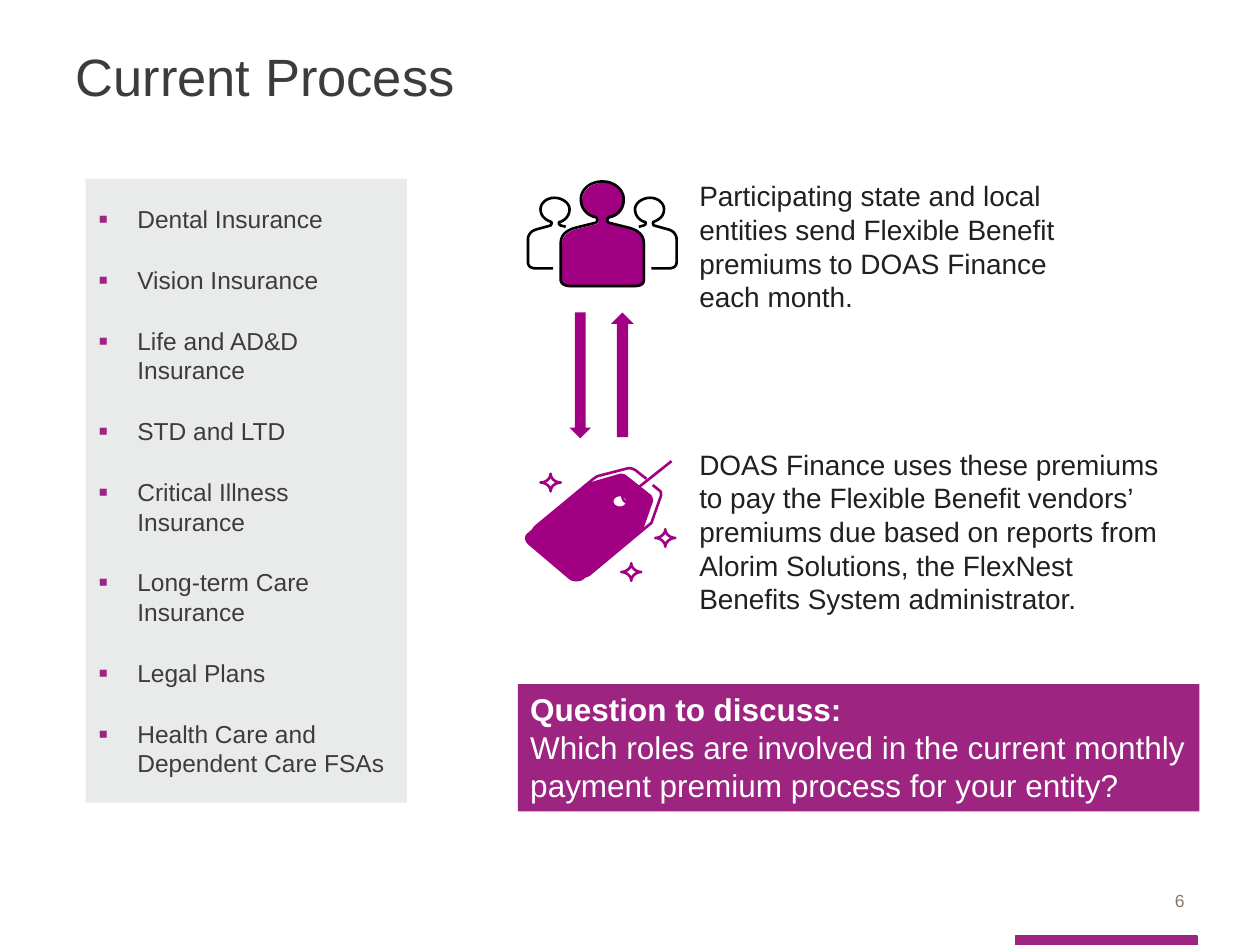
from math import cos, pi, sin

from lxml.etree import SubElement
from pptx import Presentation
from pptx.dml.color import RGBColor
from pptx.enum.shapes import MSO_SHAPE as Preset
from pptx.enum.text import MSO_ANCHOR as Anchor, MSO_AUTO_SIZE as AutoSize, PP_ALIGN as Align
from pptx.oxml.ns import qn
from pptx.util import Inches, Pt

PLANS = ["Dental Insurance", "Vision Insurance", "Life and AD&D Insurance", "STD and LTD",
         "Critical Illness Insurance", "Long-term Care Insurance", "Legal Plans",
         "Health Care and Dependent Care FSAs"]
SEND_TEXT = ("Participating state and local entities send Flexible Benefit "
             "premiums to DOAS Finance\veach month.")
PAY_TEXT = ("DOAS Finance uses these premiums to pay the Flexible Benefit vendors’ "
            "premiums due based on reports from\vAlorim Solutions, the FlexNest "
            "Benefits System administrator.")
PEOPLE_AXIS = 4.78

HALF_LEADER = [(4.78, 1.44), (4.87, 1.44, 4.95, 1.5, 4.95, 1.58), (4.95, 1.65, 4.91, 1.7, 4.85, 1.72),
               (4.83, 1.72, 4.82, 1.73, 4.82, 1.75), (4.82, 1.76, 4.83, 1.77, 4.84, 1.77), (5, 1.81),
               (5.07, 1.83, 5.11, 1.87, 5.11, 1.93), (5.11, 2.22), (5.11, 2.25, 5.08, 2.27, 5.04, 2.27),
               (4.78, 2.27)]
MEMBER = [(5.07, 1.8), (5.11, 1.79), (5.13, 1.78, 5.13, 1.76, 5.11, 1.76),
          (5.06, 1.74, 5.04, 1.7, 5.04, 1.66), (5.04, 1.61, 5.1, 1.57, 5.16, 1.57),
          (5.22, 1.57, 5.27, 1.61, 5.27, 1.66), (5.27, 1.71, 5.24, 1.74, 5.19, 1.76),
          (5.18, 1.76, 5.18, 1.78, 5.19, 1.79), (5.3, 1.82), (5.34, 1.83, 5.37, 1.86, 5.37, 1.9),
          (5.37, 2.08), (5.37, 2.11, 5.35, 2.13, 5.31, 2.13), (5.17, 2.13)]
TAG = [(5.17, 3.93), (4.98, 3.78), (4.96, 3.76, 4.94, 3.76, 4.92, 3.76), (4.68, 3.83), (4.65, 3.84),
       (4.19, 4.23), (4.16, 4.25, 4.16, 4.29, 4.19, 4.32), (4.52, 4.6), (4.55, 4.62, 4.6, 4.62, 4.63, 4.6),
       (5.09, 4.21), (5.11, 4.19), (5.18, 3.99), (5.19, 3.97, 5.18, 3.95, 5.17, 3.93)]
BACK_TAG = [(5.18, 3.85), (5.23, 3.89), (5.25, 3.9, 5.25, 3.93, 5.24, 3.95), (5.17, 4.15), (4.69, 4.55),
            (4.66, 4.58, 4.62, 4.58, 4.59, 4.55), (4.25, 4.27), (4.22, 4.25, 4.22, 4.21, 4.25, 4.18),
            (4.71, 3.8), (4.74, 3.78), (4.97, 3.72), (5, 3.71, 5.02, 3.72, 5.04, 3.73), (5.13, 3.8)]
STRING = [(5.33, 3.66), (5.04, 3.89), (5.03, 3.9, 5.01, 3.9, 4.98, 3.9),
          (4.94, 3.9, 4.93, 3.94, 4.95, 3.97), (4.97, 4, 5.03, 3.99, 5.04, 3.94)]
SPARKLE_CENTERS = [(5.28, 4.27), (4.37, 3.83), (5.01, 4.54)]


def color(value):
    return RGBColor.from_string(value)


def trace(nodes, steps=8):
    points = [nodes[0]]
    for node in nodes[1:]:
        if len(node) == 2:
            points.append(node)
            continue
        corners = [points[-1], node[:2], node[2:4], node[4:]]
        for step in range(1, steps + 1):
            t = step / steps
            weights = [(1 - t) ** 3, 3 * t * (1 - t) ** 2, 3 * t * t * (1 - t), t ** 3]
            points.append(tuple(sum(w * corner[axis] for w, corner in zip(weights, corners))
                                for axis in (0, 1)))
    return points


def mirror(points):
    return [(2 * PEOPLE_AXIS - x, y) for x, y in points]


def sparkle(center_x, center_y):
    quarter = trace([(0, -0.07), (0, -0.03, 0.04, 0, 0.08, 0)])
    upper = quarter + [(x, -y) for x, y in reversed(quarter)]
    star = upper + [(-x, y) for x, y in reversed(upper)]
    return [(center_x + x, center_y + y) for x, y in star]


class SlideBuilder:
    font = "Arial"
    dark = "3C3C3C"
    body = "202020"
    panel = "E9EAEA"
    purple = "9E2482"
    icon = "A10082"

    def __init__(self, deck):
        self.page = deck.slides.add_slide(deck.slide_layouts[1])
        self.shapes = self.page.shapes

    def place(self, shape, left, top, width, height):
        shape.left, shape.top = Inches(left), Inches(top)
        shape.width, shape.height = Inches(width), Inches(height)

    def style(self, para, size, shade, bold=False, align=Align.LEFT):
        para.alignment = align
        for span in para.runs:
            span.font.name, span.font.size = self.font, Pt(size)
            span.font.bold, span.font.color.rgb = bold, color(shade)

    def paint(self, shape, fill=None, line=None, width=0.75):
        shape.shadow.inherit = False
        if fill:
            shape.fill.solid()
            shape.fill.fore_color.rgb = color(fill)
        else:
            shape.fill.background()
        if line:
            shape.line.color.rgb = color(line)
            shape.line.width = Pt(width)
        else:
            shape.line.fill.background()

    def title(self, text, *area):
        box = self.shapes.title
        self.place(box, *area)
        box.text_frame.text = text
        box.text_frame.vertical_anchor = Anchor.TOP
        box.text_frame.auto_size = AutoSize.NONE
        self.style(box.text_frame.paragraphs[0], 30, self.dark)

    def bullets(self, items, *area):
        box = self.page.placeholders[1]
        self.place(box, *area)
        box.fill.solid()
        box.fill.fore_color.rgb = color(self.panel)
        frame = box.text_frame
        frame.text = "\n".join(items)
        frame.vertical_anchor = Anchor.MIDDLE
        frame.auto_size = AutoSize.NONE
        for index, para in enumerate(frame.paragraphs):
            props = para._p.get_or_add_pPr()
            props.set("marL", str(Inches(0.31)))
            props.set("indent", str(Inches(-0.31)))
            shade = SubElement(props, qn("a:buClr"))
            SubElement(shade, qn("a:srgbClr"), val=self.purple)
            SubElement(props, qn("a:buSzPct"), val="115000")
            SubElement(props, qn("a:buFont"), typeface=self.font)
            SubElement(props, qn("a:buChar"), char="▪")
            para.space_before, para.space_after = Pt(6 if index else 0), Pt(12)
            self.style(para, 14, self.dark)

    def text(self, text, *area, size=16, shade=body, margin=0, anchor=Anchor.TOP, align=Align.LEFT):
        box = self.shapes.add_textbox(*map(Inches, area))
        frame = box.text_frame
        frame.word_wrap = True
        frame.margin_left = frame.margin_right = Inches(margin)
        frame.margin_top = frame.margin_bottom = Inches(margin / 2)
        frame.vertical_anchor = anchor
        frame.text = text
        self.style(frame.paragraphs[0], size, shade, align=align)

    def shape(self, preset, fill, *area, line=None):
        shape = self.shapes.add_shape(preset, *map(Inches, area))
        self.paint(shape, fill, line)
        return shape

    def question(self, heading, text, *area):
        frame = self.shape(Preset.RECTANGLE, self.purple, *area).text_frame
        frame.word_wrap = True
        frame.vertical_anchor = Anchor.TOP
        frame.text = f"{heading}\n{text}"
        for para, bold in zip(frame.paragraphs, (True, False)):
            self.style(para, 18, "FFFFFF", bold)

    def outline(self, closed, opened=(), **paint):
        contours = [(points, True) for points in closed] + [(points, False) for points in opened]
        builder = None
        for points, close in contours:
            first, *rest = [(Inches(x), Inches(y)) for x, y in points]
            if builder:
                builder.move_to(*first)
            else:
                builder = self.shapes.build_freeform(*first)
            builder.add_line_segments(rest, close=close)
        self.paint(builder.convert_to_shape(), **paint)

    def people(self):
        half = trace(HALF_LEADER)
        leader = half + mirror(reversed(half))
        member = trace(MEMBER)
        self.outline([[(x + 0.01, y + 0.01) for x, y in leader]], fill=self.icon)
        self.outline([leader], [member, mirror(member)], line="000000", width=1.5)

    def price_tag(self):
        angles = [2 * pi * step / 24 for step in range(24)]
        hole = [(4.92 + 0.05 * cos(angle), 3.98 - 0.04 * sin(angle)) for angle in angles]
        self.outline([trace(TAG), hole], fill=self.icon)
        self.outline([sparkle(*center) for center in SPARKLE_CENTERS],
                     [trace(BACK_TAG), trace(STRING)], line=self.icon, width=1.5)


def main():
    deck = Presentation()
    deck.slide_width, deck.slide_height = Inches(10), Inches(7.5)
    slide = SlideBuilder(deck)
    slide.shape(Preset.RECTANGLE, slide.purple, 8.06, 7.43, 1.44, 0.07, line=slide.purple)
    slide.title("Current Process", 0.5, 0.3, 9, 1.25)
    slide.bullets(PLANS, 0.68, 1.42, 2.55, 4.95)
    slide.text("6", 8.06, 6.95, 1.44, 0.4, size=10, shade="897865", margin=0.1,
               anchor=Anchor.MIDDLE, align=Align.RIGHT)
    slide.price_tag()
    slide.text(PAY_TEXT, 5.55, 3.55, 3.74, 1.22)
    slide.people()
    slide.text(SEND_TEXT, 5.55, 1.42, 3, 1.14)
    slide.shape(Preset.UP_ARROW, slide.icon, 4.85, 2.48, 0.18, 0.99)
    slide.shape(Preset.DOWN_ARROW, slide.icon, 4.52, 2.48, 0.17, 1)
    slide.question("Question to discuss:", "Which roles are involved in the current monthly "
                   "payment premium process for your entity?", 4.11, 5.43, 5.41, 1.01)
    deck.save("out.pptx")


if __name__ == "__main__":
    main()
